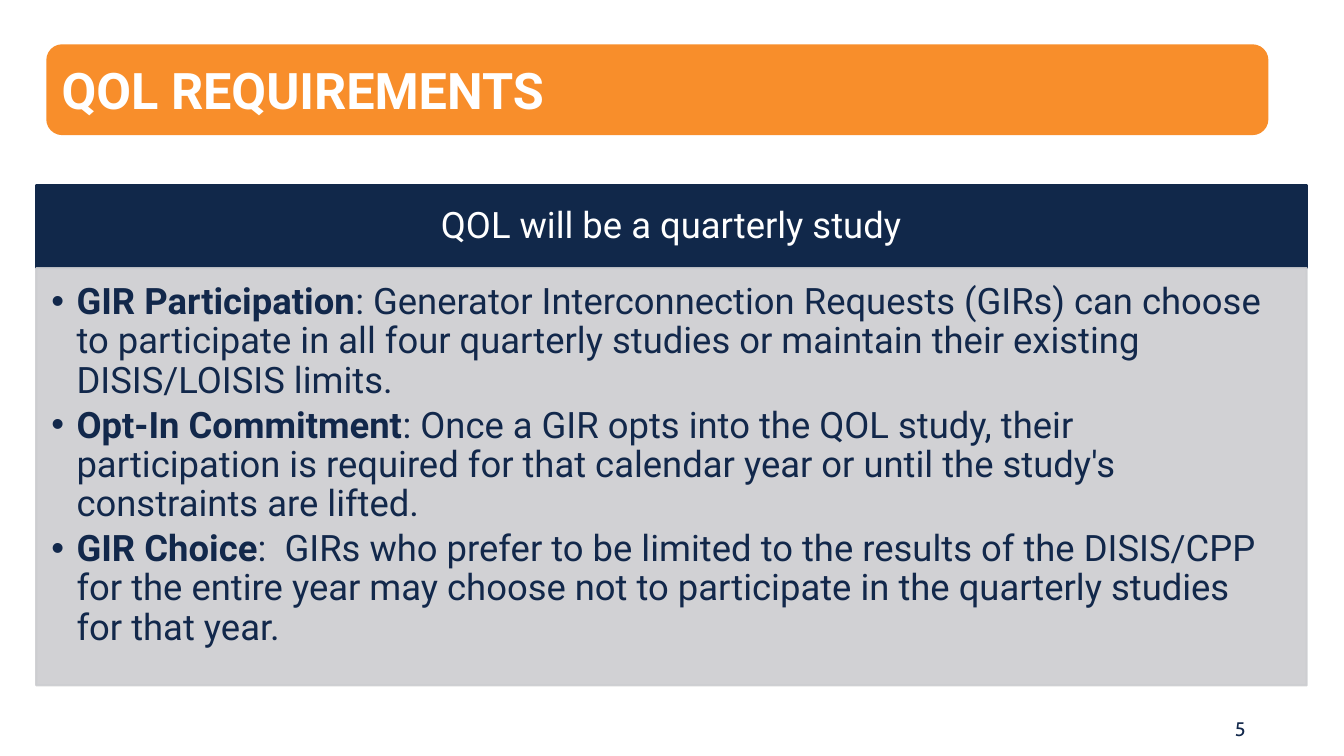
from lxml import etree
from pptx import Presentation
from pptx.dml.color import RGBColor as Rgb
from pptx.enum.shapes import MSO_SHAPE as Kind
from pptx.enum.text import MSO_ANCHOR as Anchor, PP_ALIGN as Align
from pptx.oxml.ns import qn
from pptx.util import Pt

NAVY, ORANGE, GRAY, WHITE = "12284B", "F88E2B", "CCCDD0", "FFFFFF"
BAND = "11284A"
PX = 9144
SIZE = 1333, 750

TITLE = "QOL REQUIREMENTS"
HEAD = "QOL will be a quarterly study"
RULES = [
    ("GIR Participation", ": Generator Interconnection Requests (GIRs) can choose to "
     "participate in all four quarterly studies or maintain their existing "
     "DISIS/LOISIS limits."),
    ("Opt-In Commitment", ": Once a GIR opts into the QOL study, their participation is "
     "required for that calendar year or until the study's constraints are lifted."),
    ("GIR Choice", ":  GIRs who prefer to be limited to the results of the DISIS/CPP for "
     "the entire year may choose not to participate in the quarterly studies for that year."),
]
PAGE = "5"

LEFT, TOP, WIDE = 36, 184, 1260
HEAD_H, BODY_H = 82, 414
INDENT = 25


def color(code):
    return Rgb.from_string(code)


def assign(obj, vals):
    for key, val in vals.items():
        setattr(obj, key, val)


def fade(fill, share):
    for tone in fill.iter(qn("a:srgbClr")):
        etree.SubElement(tone, qn("a:alpha"), val=str(share * 1000))


def panel(kind, box, code):
    shape = slide.shapes.add_shape(kind, *[n * PX for n in box])
    shape.shadow.inherit = False
    for fill in (shape.fill, shape.line.fill):
        fill.solid()
        fill.fore_color.rgb = color(code)
    shape.line.width = Pt(1.5)
    return shape


def write(shape, paras, look, pad, anchor, form):
    frame = shape.text_frame
    sides = ("margin_left", "margin_top", "margin_right", "margin_bottom")
    assign(frame, {"word_wrap": True, "vertical_anchor": anchor,
                   **{side: n * PX for side, n in zip(sides, pad)}})
    for i, runs in enumerate(paras):
        para = frame.add_paragraph() if i else frame.paragraphs[0]
        assign(para, form)
        for text, bold in runs:
            run = para.add_run()
            run.text = text
            assign(run.font, {**look, "bold": bold})
            run.font.color.rgb = color(tint[shape.shape_id])
    return frame


def bullet(para):
    props = para._p.get_or_add_pPr()
    props.set("marL", str(INDENT * PX))
    props.set("indent", str(-INDENT * PX))
    etree.SubElement(props, qn("a:buFont"), typeface="Arial")
    etree.SubElement(props, qn("a:buChar"), char="•")


deck = Presentation()
assign(deck, {"slide_width": SIZE[0] * PX, "slide_height": SIZE[1] * PX})
slide = deck.slides.add_slide(deck.slide_layouts[6])

page = slide.shapes.add_textbox(*[n * PX for n in (1210, 697, 40, 42)])
head = panel(Kind.RECTANGLE, (LEFT, TOP, WIDE, HEAD_H), BAND)
body = panel(Kind.RECTANGLE, (LEFT, TOP + HEAD_H, WIDE, BODY_H), GRAY)
title = panel(Kind.ROUNDED_RECTANGLE, (47, 45, 1210, 88), ORANGE)
fade(body._element.spPr, 90)

tint = {page.shape_id: NAVY, head.shape_id: WHITE,
        body.shape_id: NAVY, title.shape_id: WHITE}
text = {"name": "Roboto", "size": Pt(26)}

write(page, [[(PAGE, False)]], {"name": "Cabin", "size": Pt(14)},
      (3, 5, 3, 5), Anchor.BOTTOM, {"alignment": Align.CENTER})
write(head, [[(HEAD, False)]], text, (20, 12, 20, 12), Anchor.MIDDLE,
      {"alignment": Align.CENTER, "line_spacing": 0.9})
rules = write(body, [[(name, True), (rest, False)] for name, rest in RULES], text,
              (15, 15, 20, 23), Anchor.TOP,
              {"alignment": Align.LEFT, "line_spacing": 0.9, "space_after": Pt(4)})
for para in rules.paragraphs:
    bullet(para)
write(title, [[(TITLE, True)]], {**text, "size": Pt(36)}, (10, 5, 10, 5),
      Anchor.MIDDLE, {"alignment": Align.LEFT})

deck.save("out.pptx")
